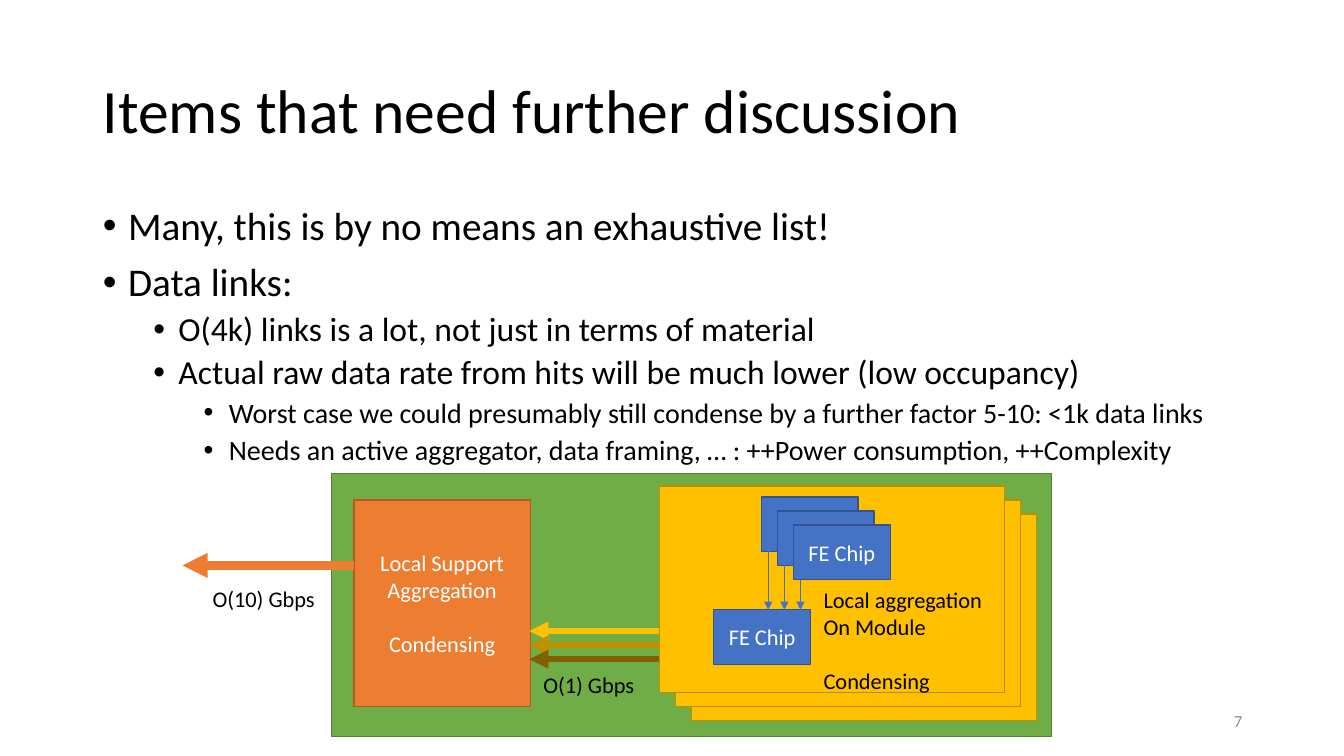
from lxml.etree import SubElement as Sub
from pptx import Presentation
from pptx.dml.color import RGBColor
from pptx.enum.shapes import MSO_CONNECTOR as Link, MSO_SHAPE as Shape
from pptx.enum.text import MSO_ANCHOR as Anchor, MSO_AUTO_SIZE as Fit, PP_ALIGN as Align
from pptx.oxml.ns import qn
from pptx.util import Pt

SCALE = 9144
FONT = "Calibri"
BLACK = RGBColor(0x00, 0x00, 0x00)
WHITE = RGBColor(0xFF, 0xFF, 0xFF)
GRAY = RGBColor(0x8C, 0x8C, 0x8C)
GREEN = RGBColor(0x70, 0xAD, 0x47)
MOSS = RGBColor(0x53, 0x80, 0x35)
GOLD = RGBColor(0xFF, 0xC0, 0x00)
OCHRE = RGBColor(0xBD, 0x8E, 0x00)
AMBER = RGBColor(0xBF, 0x90, 0x00)
BROWN = RGBColor(0x80, 0x60, 0x00)
BLUE = RGBColor(0x44, 0x72, 0xC4)
NAVY = RGBColor(0x32, 0x54, 0x91)
ORANGE = RGBColor(0xED, 0x7D, 0x31)
RUST = RGBColor(0xAF, 0x5C, 0x24)

ITEMS = [
    (0, "Many, this is by no means an exhaustive list!"),
    (0, "Data links:"),
    (1, "O(4k) links is a lot, not just in terms of material"),
    (1, "Actual raw data rate from hits will be much lower (low occupancy)"),
    (2, "Worst case we could presumably still condense by a further factor 5-10: <1k data links"),
    (2, "Needs an active aggregator, data framing, … : ++Power consumption, ++Complexity"),
]
SIZES = [28, 24, 20]
STEP_X, STEP_Y = 16, 14


def px(*nums):
    return [num * SCALE for num in nums]


def style(para, size, color, align=Align.LEFT):
    para.alignment = align
    for run in para.runs:
        run.font.name = FONT
        run.font.size = Pt(size)
        run.font.color.rgb = color


def place(shape, area):
    shape.left, shape.top, shape.width, shape.height = px(*area)


def head(slide, area, text):
    title = slide.shapes.title
    place(title, area)
    frame = title.text_frame
    frame.text = text
    frame.auto_size = Fit.NONE
    frame.vertical_anchor = Anchor.MIDDLE
    frame.paragraphs[0].line_spacing = 0.9
    style(frame.paragraphs[0], 44, BLACK)


def bullets(slide, area, items):
    body = slide.placeholders[1]
    place(body, area)
    frame = body.text_frame
    frame.text = "\n".join(text for _, text in items)
    frame.auto_size = Fit.NONE
    for para, (level, _) in zip(frame.paragraphs, items):
        para.level = level
        para.line_spacing = 0.9
        para.space_before = Pt(5 if level else 10)
        style(para, SIZES[level], BLACK)
        props = para._p.get_or_add_pPr()
        left, hang = px(25 + 50 * level, -25)
        props.set("marL", str(left))
        props.set("indent", str(hang))
        Sub(props, qn("a:buFont")).set("typeface", "Arial")
        Sub(props, qn("a:buChar")).set("char", "•")


def fill(frame, text, size, color, align, gap=False):
    frame.text = text
    for para in frame.paragraphs:
        style(para, size, color, align)
    if gap:
        frame.paragraphs[-1].space_before = Pt(19.5)


def box(group, area, color, edge, text="", gap=False):
    rect = group.shapes.add_shape(Shape.RECTANGLE, *px(*area))
    rect.shadow.inherit = False
    rect.fill.solid()
    rect.fill.fore_color.rgb = color
    rect.line.color.rgb = edge
    rect.line.width = Pt(1)
    if text:
        rect.text_frame.vertical_anchor = Anchor.MIDDLE
        fill(rect.text_frame, text, 16, WHITE, Align.CENTER, gap)


def label(owner, area, text, size=16, color=BLACK, align=Align.LEFT, wrap=True, gap=False):
    note = owner.shapes.add_textbox(*px(*area))
    note.text_frame.word_wrap = wrap
    fill(note.text_frame, text, size, color, align, gap)
    return note


def arrow(group, start, end, color, width):
    link = group.shapes.add_connector(Link.STRAIGHT, *px(*start, *end))
    link.line.color.rgb = color
    link.line.width = Pt(width)
    Sub(link.line._get_or_add_ln(), qn("a:tailEnd")).set("type", "triangle")
    Sub(link._element.spPr, qn("a:effectLst"))


def module(group):
    for step in (2, 1, 0):
        box(group, (654 + STEP_X * step, 482 + STEP_Y * step, 342, 205), GOLD, OCHRE)
    for step, text in enumerate(("", "", "FE Chip")):
        box(group, (755 + STEP_X * step, 493 + STEP_Y * step, 96, 54), BLUE, NAVY, text)
    box(group, (708, 605, 96, 54), BLUE, NAVY, "FE Chip")
    for step in range(3):
        x = 762 + STEP_X * step
        arrow(group, (x, 547 + STEP_Y * step), (x, 605), BLUE, 0.5)
    label(group, (807, 577, 208, 133), "Local aggregation\nOn Module\nCondensing",
          wrap=False, gap=True)


def diagram(slide):
    group = slide.shapes.add_group_shape()
    box(group, (329, 470, 714, 261), GREEN, MOSS)
    module(group)
    box(group, (351, 496, 175, 205), ORANGE, RUST,
        "Local Support Aggregation\nCondensing", gap=True)
    for step, color in enumerate((GOLD, AMBER, BROWN)):
        y = 626 + STEP_Y * step
        arrow(group, (654, y), (525, y), color, 4.5)
    arrow(group, (351, 561), (181, 561), ORANGE, 6)
    label(group, (529, 661, 119, 72), "O(1) Gbps")
    label(group, (201, 576, 129, 72), "O(10) Gbps")


def main():
    deck = Presentation()
    deck.slide_width, deck.slide_height = px(1333, 750)
    slide = deck.slides.add_slide(deck.slide_layouts[1])
    head(slide, (92, 40, 1150, 145), "Items that need further discussion")
    bullets(slide, (92, 200, 1150, 476), ITEMS)
    diagram(slide)
    page = label(slide, (942, 695, 300, 40), "7", 12, GRAY, Align.RIGHT)
    page.text_frame.vertical_anchor = Anchor.MIDDLE
    deck.save("out.pptx")


if __name__ == "__main__":
    main()
